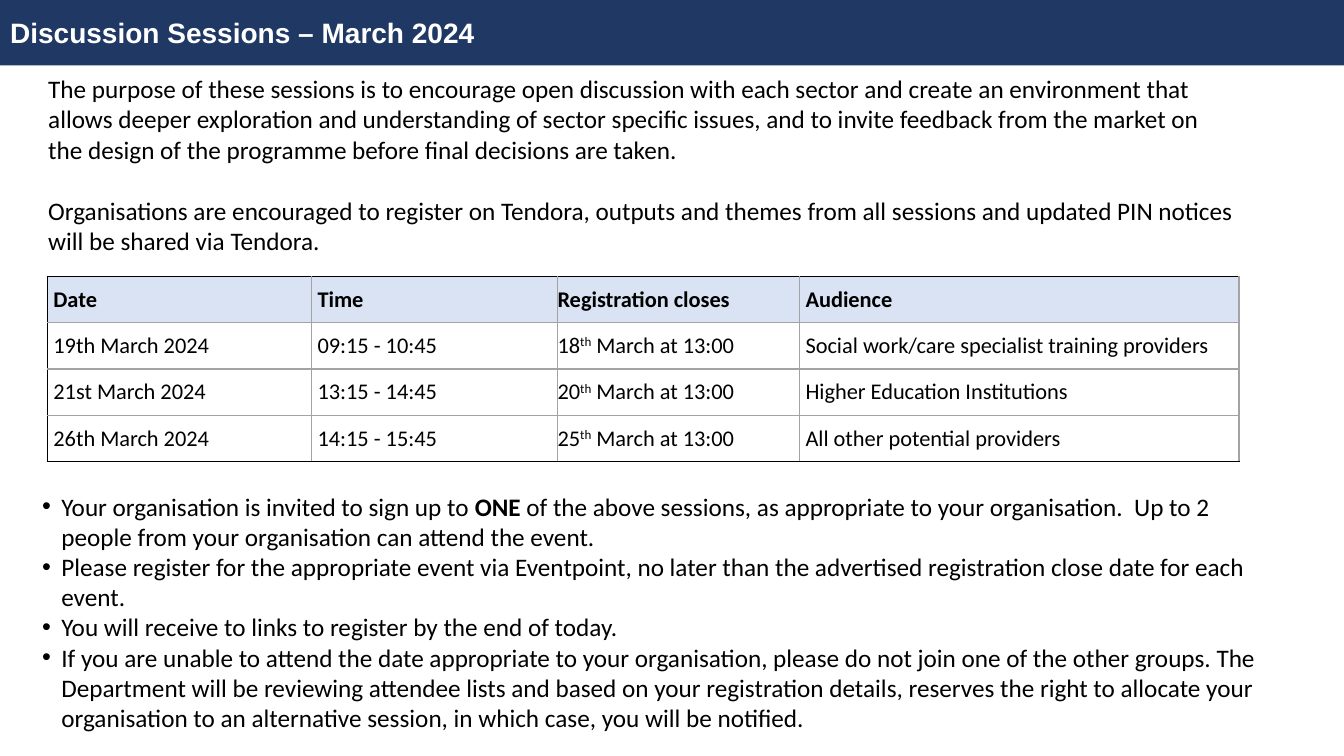
import dataclasses

import lxml.etree
import pptx
import pptx.dml.color
import pptx.enum.text
import pptx.oxml.ns
import pptx.util

NAVY = pptx.dml.color.RGBColor(0x20, 0x38, 0x64)
PALE_BLUE = pptx.dml.color.RGBColor(0xDA, 0xE3, 0xF3)
GREY = pptx.dml.color.RGBColor(0xA3, 0xA3, 0xA3)
BLACK = pptx.dml.color.RGBColor(0, 0, 0)
WHITE = pptx.dml.color.RGBColor(0xFF, 0xFF, 0xFF)

SLIDE_WIDTH, SLIDE_HEIGHT = 13.33, 7.5
COLUMN_SHARES = (2.62, 2.44, 2.4, 4.36)
CLOSING_COLUMN = 2
BULLET_INDENT = 0.19

TITLE = "Discussion Sessions – March 2024"
PURPOSE = (
    "The purpose of these sessions is to encourage open discussion with each sector and "
    "create an environment that allows deeper exploration and understanding of sector "
    "specific issues, and to invite feedback from the market on the design of the "
    "programme before final decisions are taken.",
    "Organisations are encouraged to register on Tendora, outputs and themes from all "
    "sessions and updated PIN notices will be shared via Tendora.",
)
SESSIONS = (
    ("Date", "Time", "Registration closes", "Audience"),
    ("19th March 2024", "09:15 - 10:45", ("18", "th", " March at 13:00"),
     "Social work/care specialist training providers"),
    ("21st March 2024", "13:15 - 14:45", ("20", "th", " March at 13:00"),
     "Higher Education Institutions"),
    ("26th March 2024", "14:15 - 15:45", ("25", "th", " March at 13:00"),
     "All other potential providers"),
)
RULES = (
    ("Your organisation is invited to sign up to ", "ONE",
     " of the above sessions, as appropriate to your organisation.  Up to 2 people from "
     "your organisation can attend the event."),
    ("Please register for the appropriate event via Eventpoint, no later than the "
     "advertised registration close date for each event.",),
    ("You will receive to links to register by the end of today.",),
    ("If you are unable to attend the date appropriate to your organisation, please do not "
     "join one of the other groups. The Department will be reviewing attendee lists and "
     "based on your registration details, reserves the right to allocate your organisation "
     "to an alternative session, in which case, you will be notified.",),
)


@dataclasses.dataclass
class Box:
    """A region of the slide in inches."""
    left: float
    top: float
    width: float
    height: float

    def lengths(self):
        """Return left, top, width and height as slide lengths."""
        return [pptx.util.Inches(value) for value in dataclasses.astuple(self)]


def style_paragraph(paragraph, size, name="Calibri", color=BLACK, bold=False):
    """Set the font of a whole paragraph."""
    font = paragraph.font
    font.size, font.name, font.bold = pptx.util.Pt(size), name, bold
    font.color.rgb = color


def add_title(slide, box):
    """Turn the title placeholder into the banner."""
    title = slide.shapes.title
    title.left, title.top, title.width, title.height = box.lengths()
    title.fill.solid()
    title.fill.fore_color.rgb = NAVY
    frame = title.text_frame
    frame.text = TITLE
    frame.auto_size = pptx.enum.text.MSO_AUTO_SIZE.NONE
    frame.vertical_anchor = pptx.enum.text.MSO_ANCHOR.MIDDLE
    frame.paragraphs[0].alignment = pptx.enum.text.PP_ALIGN.LEFT
    style_paragraph(frame.paragraphs[0], 20, "Arial", WHITE, True)


def add_paragraphs(slide, box, count):
    """Add a wrapping text box and return its paragraphs."""
    frame = slide.shapes.add_textbox(*box.lengths()).text_frame
    frame.word_wrap = True
    for _ in range(count - 1):
        frame.add_paragraph()
    for paragraph in frame.paragraphs:
        style_paragraph(paragraph, 18)
    return frame.paragraphs


def add_purpose(slide, box):
    """Add the introduction with a line of space between paragraphs."""
    paragraphs = add_paragraphs(slide, box, len(PURPOSE))
    for paragraph, text in zip(paragraphs, PURPOSE):
        paragraph.add_run().text = text
    paragraphs[-1].space_before = pptx.util.Pt(22)


def set_borders(cell, colors):
    """Draw one-point borders in left, right, top, bottom order."""
    properties = cell._tc.get_or_add_tcPr()
    for side, color in zip("LRTB", colors):
        line = lxml.etree.SubElement(
            properties, pptx.oxml.ns.qn(f"a:ln{side}"), w=str(pptx.util.Pt(1)))
        fill = lxml.etree.SubElement(line, pptx.oxml.ns.qn("a:solidFill"))
        lxml.etree.SubElement(fill, pptx.oxml.ns.qn("a:srgbClr"), val=str(color))


def fill_cell(cell, content, row, column):
    """Write and format one cell of the session table."""
    last_row = len(SESSIONS) - 1
    set_borders(cell, (BLACK if column == 0 else GREY, GREY,
                       BLACK if row == 0 else GREY,
                       BLACK if row == last_row else GREY))
    if row == 0:
        cell.fill.solid()
        cell.fill.fore_color.rgb = PALE_BLUE
    else:
        cell.fill.background()
    margin = pptx.util.Inches(0 if column == CLOSING_COLUMN else 0.06)
    cell.margin_left = cell.margin_right = margin
    cell.margin_top = cell.margin_bottom = margin
    cell.vertical_anchor = pptx.enum.text.MSO_ANCHOR.MIDDLE
    paragraph = cell.text_frame.paragraphs[0]
    style_paragraph(paragraph, 16, bold=row == 0)
    for text in (content,) if isinstance(content, str) else content:
        run = paragraph.add_run()
        run.text = text
        if text == "th":
            run._r.get_or_add_rPr().set("baseline", "30000")


def add_sessions(slide, box):
    """Add the table of sessions."""
    table = slide.shapes.add_table(
        len(SESSIONS), len(COLUMN_SHARES), *box.lengths()).table
    table.first_row = table.horz_banding = False
    for column, share in zip(table.columns, COLUMN_SHARES):
        column.width = pptx.util.Inches(box.width * share / sum(COLUMN_SHARES))
    for row, contents in enumerate(SESSIONS):
        table.rows[row].height = pptx.util.Inches(box.height / len(SESSIONS))
        for column, content in enumerate(contents):
            fill_cell(table.cell(row, column), content, row, column)


def add_rules(slide, box):
    """Add the bulleted sign-up rules."""
    indent = pptx.util.Inches(BULLET_INDENT)
    for paragraph, texts in zip(add_paragraphs(slide, box, len(RULES)), RULES):
        properties = paragraph._p.get_or_add_pPr()
        properties.set("marL", str(indent))
        properties.set("indent", str(-indent))
        bullet_font = lxml.etree.Element(pptx.oxml.ns.qn("a:buFont"), typeface="Arial")
        bullet = lxml.etree.Element(pptx.oxml.ns.qn("a:buChar"), char="•")
        properties.insert(0, bullet_font)
        properties.insert(1, bullet)
        for text in texts:
            run = paragraph.add_run()
            run.text = text
            if text == "ONE":
                run.font.bold = True


def main():
    """Build and save the discussion sessions slide."""
    presentation = pptx.Presentation()
    presentation.slide_width = pptx.util.Inches(SLIDE_WIDTH)
    presentation.slide_height = pptx.util.Inches(SLIDE_HEIGHT)
    slide = presentation.slides.add_slide(
        presentation.slide_layouts.get_by_name("Title Only"))
    add_title(slide, Box(0, 0, SLIDE_WIDTH, 0.65))
    add_purpose(slide, Box(0.38, 0.68, 12, 1.92))
    add_sessions(slide, Box(0.47, 2.74, 11.82, 1.84))
    add_rules(slide, Box(0.32, 4.82, 12.49, 2.52))
    presentation.save("out.pptx")


if __name__ == "__main__":
    main()
